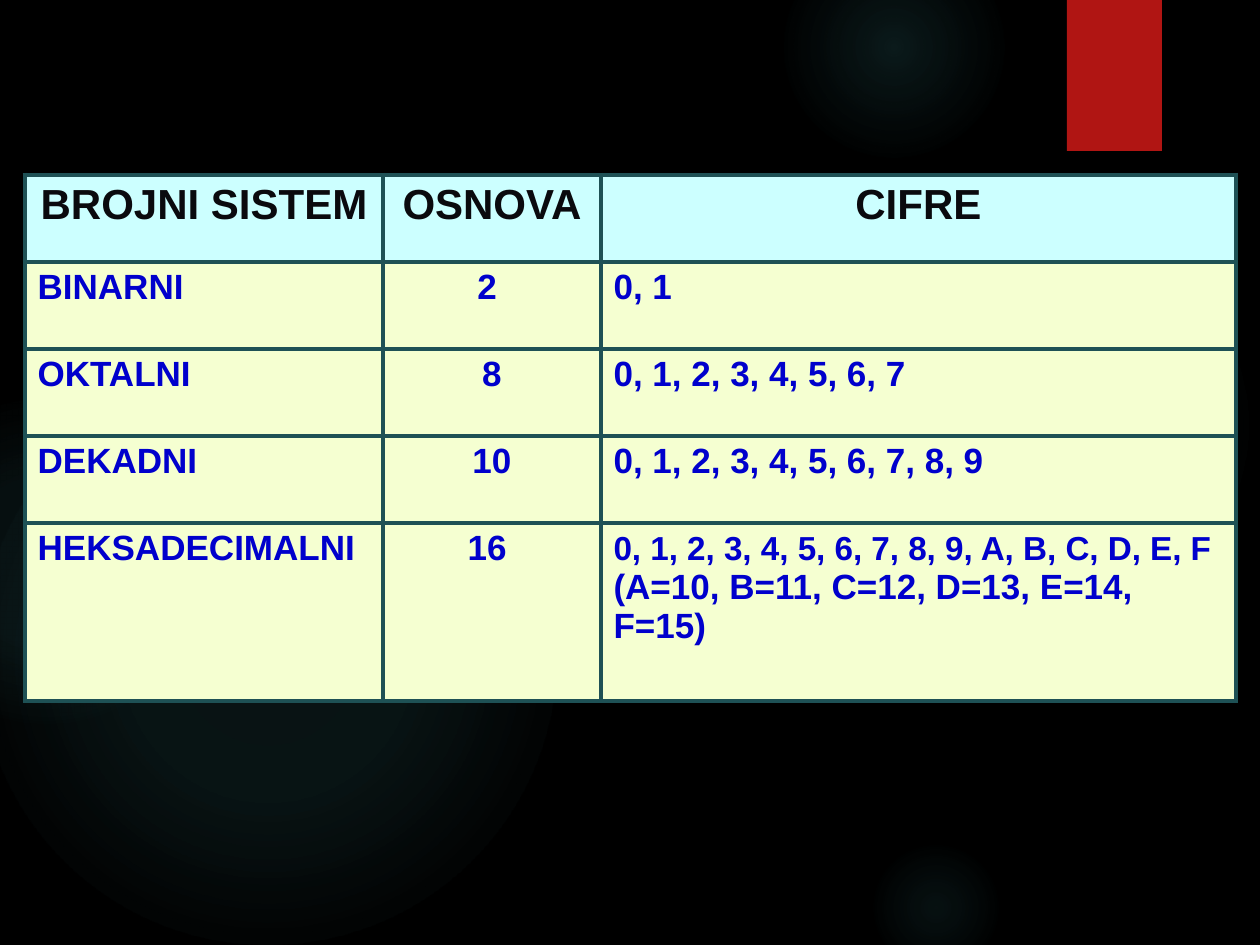
from pptx import Presentation, util as u
from pptx.dml.color import RGBColor
from pptx.enum import shapes, text
from pptx.oxml import parse_xml
from pptx.oxml.ns import nsdecls

PX = u.Inches(1) / 126
BLACK = RGBColor(0x00, 0x00, 0x00)
GLOW = RGBColor(0x50, 0xB9, 0xC1)
RED = RGBColor(0xB0, 0x15, 0x13)
BORDER = RGBColor(0x1E, 0x51, 0x55)
HEADER_FILL = RGBColor(0xCC, 0xFF, 0xFF)
HEADER_INK = RGBColor(0x0A, 0x0A, 0x0E)
BODY_FILL = RGBColor(0xF5, 0xFF, 0xD1)
BODY_INK = RGBColor(0x00, 0x00, 0xCC)


def px(length):
    return u.Emu(round(length * PX))


class SlideBuilder:
    font = "Arial"
    header_size = 24
    body_size = 20
    border_width = 3

    def __init__(self, slide):
        self.slide = slide

    def background(self, color):
        self.slide.background.fill.solid()
        self.slide.background.fill.fore_color.rgb = color

    def shape(self, kind, left, top, width, height):
        item = self.slide.shapes.add_shape(kind, px(left), px(top), px(width), px(height))
        item.shadow.inherit = False
        item.line.fill.background()
        return item

    def rectangle(self, left, top, width, height, color):
        block = self.shape(shapes.MSO_SHAPE.RECTANGLE, left, top, width, height)
        block.fill.solid()
        block.fill.fore_color.rgb = color

    def glow(self, left, top, size, stops):
        """Circle fading outwards; stops are (position %, opacity %)."""
        circle = self.shape(shapes.MSO_SHAPE.OVAL, left, top, size, size)
        marks = "".join(
            f'<a:gs pos="{position * 1000}"><a:srgbClr val="{GLOW}">'
            f'<a:alpha val="{opacity * 1000}"/></a:srgbClr></a:gs>'
            for position, opacity in stops)
        gradient = parse_xml(
            f'<a:gradFill {nsdecls("a")} rotWithShape="1"><a:gsLst>{marks}</a:gsLst>'
            '<a:path path="circle"><a:fillToRect l="50000" t="50000" r="50000" b="50000"/>'
            '</a:path></a:gradFill>')
        circle.element.spPr.find("{*}prstGeom").addnext(gradient)

    def borders(self, cell):
        properties = cell._tc.get_or_add_tcPr()
        for side in "LRTB":
            properties.append(parse_xml(
                f'<a:ln{side} {nsdecls("a")} w="{u.Pt(self.border_width)}"><a:solidFill>'
                f'<a:srgbClr val="{BORDER}"/></a:solidFill></a:ln{side}>'))

    def cell(self, cell, runs, header, centered):
        self.borders(cell)
        cell.fill.solid()
        cell.fill.fore_color.rgb = HEADER_FILL if header else BODY_FILL
        paragraph = cell.text_frame.paragraphs[0]
        paragraph.alignment = text.PP_ALIGN.CENTER if centered else text.PP_ALIGN.LEFT
        font = paragraph.font
        font.name, font.bold = self.font, True
        font.size = u.Pt(self.header_size if header else self.body_size)
        font.color.rgb = HEADER_INK if header else BODY_INK
        for words, size in runs:
            run = paragraph.add_run()
            run.text = words
            if size:
                run.font.size = u.Pt(size)

    def table(self, left, top, widths, heights, rows):
        grid = self.slide.shapes.add_table(
            len(heights), len(widths), px(left), px(top), px(sum(widths)), px(sum(heights))).table
        for column, width in zip(grid.columns, widths):
            column.width = px(width)
        for r, (height, values) in enumerate(zip(heights, rows)):
            grid.rows[r].height = px(height)
            for c, value in enumerate(values):
                runs = [(value, None)] if isinstance(value, str) else value
                self.cell(grid.cell(r, c), runs, header=r == 0, centered=r == 0 or c == 1)


def main():
    deck = Presentation()
    deck.slide_width, deck.slide_height = px(1260), px(945)
    page = SlideBuilder(deck.slides.add_slide(deck.slide_layouts[6]))

    # Dark backdrop with soft glows
    page.background(BLACK)
    page.glow(868, 231, 388, [(0, 7), (36, 6), (69, 0)])
    page.glow(784, -63, 220, [(0, 14), (36, 7), (73, 0)])
    page.glow(868, 840, 136, [(0, 9), (36, 5), (66, 0)])
    page.glow(-21, 368, 577, [(0, 11), (36, 10), (75, 0)])
    page.glow(-116, 399, 325, [(0, 8), (36, 8), (72, 0)])

    # Red bookmark
    page.rectangle(1067, 0, 95, 151, RED)

    # Number systems
    hex_digits = [("0, 1, 2, 3, 4, 5, 6, 7, 8, 9, A, B, C, D, E, F", 19),
                  (" (A=10, B=11, C=12, D=13, E=14, F=15)", None)]
    page.table(25, 175, [358, 218, 635], [87] * 4 + [178], [
        ("BROJNI SISTEM", "OSNOVA", "CIFRE"),
        ("BINARNI", "2 ", "0, 1"),
        ("OKTALNI", "8", "0, 1, 2, 3, 4, 5, 6, 7"),
        ("DEKADNI", "10", "0, 1, 2, 3, 4, 5, 6, 7, 8, 9"),
        ("HEKSADECIMALNI", "16 ", hex_digits),
    ])

    deck.save("out.pptx")


if __name__ == "__main__":
    main()
